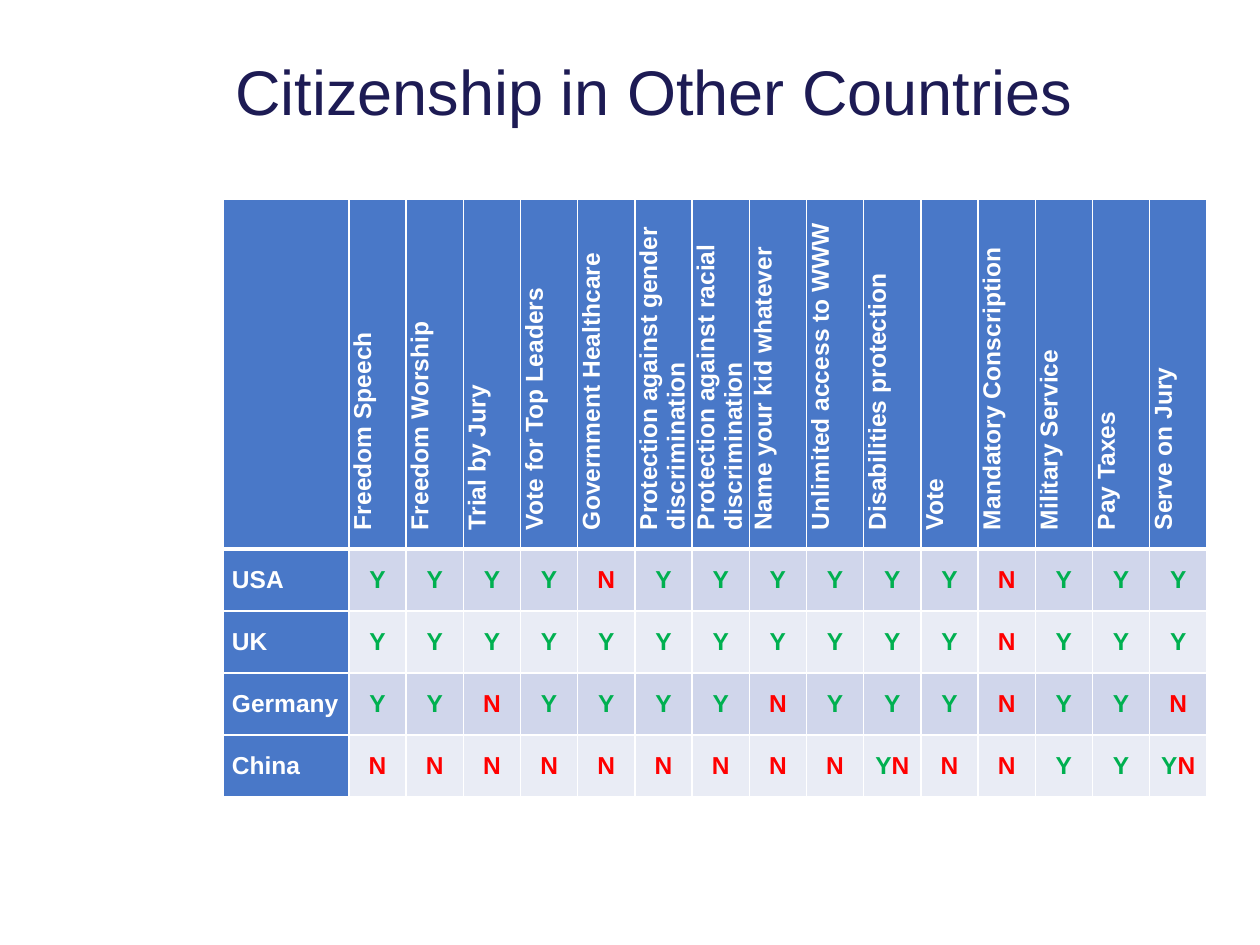
from lxml import etree
from pptx import Presentation
from pptx import util as u
from pptx.dml.color import RGBColor
from pptx.enum import text
from pptx.oxml.ns import qn

PX = 914400 // 126
HUE = {"title": "1D1B54", "head": "4978C8", "odd": "D0D6EB", "even": "E9ECF5",
       "white": "FFFFFF", "Y": "00B050", "N": "FF0000"}
RIGHTS = ["Freedom Speech", "Freedom Worship", "Trial by Jury",
          "Vote for Top Leaders", "Government Healthcare",
          "Protection against gender\ndiscrimination",
          "Protection against racial\ndiscrimination",
          "Name your kid whatever", "Unlimited access to WWW",
          "Disabilities protection", "Vote", "Mandatory Conscription",
          "Military Service", "Pay Taxes", "Serve on Jury"]
MARKS = {"USA": "Y Y Y Y N Y Y Y Y Y Y N Y Y Y",
         "UK": "Y Y Y Y Y Y Y Y Y Y Y N Y Y Y",
         "Germany": "Y Y N Y Y Y Y N Y Y Y N Y Y N",
         "China": "N N N N N N N N N YN N N Y Y YN"}


def write(para, words, size, hue, bold=True):
    run = para.add_run()
    run.text = words
    form = {"name": "Arial", "size": u.Pt(size), "bold": bold}
    for key, val in form.items():
        setattr(run.font, key, val)
    run.font.color.rgb = RGBColor.from_string(HUE[hue])


def edge(cell, side, width):
    line = etree.SubElement(cell._tc.get_or_add_tcPr(), qn("a:ln" + side),
                            w=str(u.Pt(width)))
    fill = etree.SubElement(line, qn("a:solidFill"))
    etree.SubElement(fill, qn("a:srgbClr"), val=HUE["white"])


deck = Presentation()
deck.slide_width, deck.slide_height = 1260 * PX, 945 * PX
slide = deck.slides.add_slide(deck.slide_layouts[6])

# Title
box = slide.shapes.add_textbox(223 * PX, 55 * PX, 992 * PX, 71 * PX)
frame = box.text_frame
frame.word_wrap = True
frame.vertical_anchor = text.MSO_ANCHOR.MIDDLE
write(frame.paragraphs[0], "Citizenship in Other Countries", 36, "title", False)

# Table grid: a name column, then equal columns for the rights
rows = [["", *RIGHTS]] + [[land, *marks.split()] for land, marks in MARKS.items()]
wide, name, high, low = 984 * PX, 126 * PX, 350 * PX, 62 * PX
table = slide.shapes.add_table(len(rows), len(rows[0]), 223 * PX, 199 * PX,
                               wide, high + low * len(MARKS)).table
for c, col in enumerate(table.columns):
    col.width = (wide - name) // len(RIGHTS) if c else name
for r, row in enumerate(table.rows):
    row.height = low if r else high

# Cells
for r, row in enumerate(rows):
    for c, words in enumerate(row):
        cell = table.cell(r, c)
        form = {"margin_left": 9 * PX, "margin_right": 9 * PX, "margin_top": 0,
                "margin_bottom": 0, "vertical_anchor": text.MSO_ANCHOR.MIDDLE}
        for key, val in form.items():
            setattr(cell, key, val)
        for side in "LRTB":
            thick = (r, side) in ((0, "B"), (1, "T"))
            edge(cell, side, 3 if thick else 1)
        tint = "head" if r == 0 or c == 0 else "odd" if r % 2 else "even"
        cell.fill.solid()
        cell.fill.fore_color.rgb = RGBColor.from_string(HUE[tint])

        para = cell.text_frame.paragraphs[0]
        if r and c:
            para.alignment = text.PP_ALIGN.CENTER
            for mark in words:
                write(para, mark, 14, mark)
        elif words:
            if r == 0:
                cell._tc.get_or_add_tcPr().set("vert", "vert270")
                para._p.get_or_add_pPr().set("marL", str(10 * PX))
            for i, part in enumerate(words.split("\n")):
                if i:
                    para.add_line_break()
                    etree.SubElement(para._p[-1], qn("a:rPr"), sz="1400")
                write(para, part, 14, "white")

deck.save("out.pptx")
